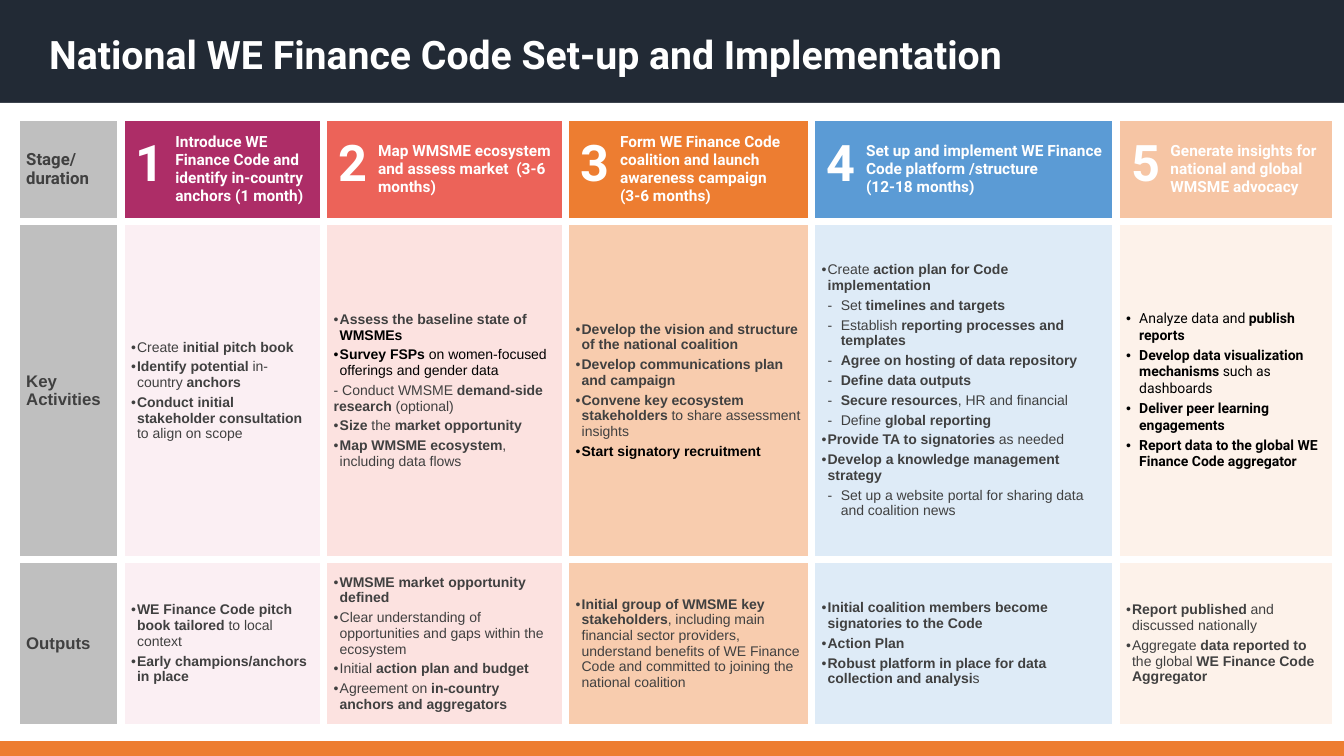
"""Build the slide on setting up and implementing the National WE Finance Code."""
from lxml import etree
from pptx import Presentation
from pptx.dml.color import RGBColor
from pptx.enum.shapes import MSO_SHAPE
from pptx.enum.text import MSO_ANCHOR
from pptx.oxml.ns import qn
from pptx.util import Inches, Pt

RECTANGLE = MSO_SHAPE.RECTANGLE
TOP, MIDDLE = MSO_ANCHOR.TOP, MSO_ANCHOR.MIDDLE

COLORS = {"white": "FFFFFF", "black": "000000", "navy": "222A35", "orange": "ED7D31",
          "text": "404040", "label": "BFBFBF"}
TITLE = "National WE Finance Code Set-up and Implementation "
ROW_LABELS = [("Stage/ duration", "Roboto"), ("Key Activities", "Arial"), ("Outputs", "Arial")]

# *bold*, #black#; the first item of each pair is the bullet style
STAGES = [
    {"width": 2.01, "strong": "AD2D67", "pale": "FBEFF3",
     "name": "Introduce WE Finance Code and identify in-country anchors (1 month)",
     "activities": [
         ("dot", "Create *initial pitch book*"),
         ("dot", "*Identify potential* in-country *anchors*"),
         ("dot", "*Conduct initial stakeholder consultation *to align on scope ")],
     "outputs": [
         ("dot", "*WE Finance Code pitch book tailored *to local context"),
         ("dot", "*Early champions/anchors in place*")]},
    {"width": 2.4, "strong": "EC6359", "pale": "FCE2E0",
     "name": "Map WMSME ecosystem and assess market  (3-6 months)",
     "activities": [
         ("dot", "*Assess the baseline state of *#*WMSMEs *#"),
         ("dot", "#*Survey FSPs* on women-focused offerings and gender data#"),
         ("plain", "- Conduct WMSME *demand-side research *(optional)"),
         ("dot", "*Size* the *market opportunity*"),
         ("dot", "*Map WMSME ecosystem*, including data flows")],
     "outputs": [
         ("dot", "*WMSME market opportunity defined*"),
         ("dot", "Clear understanding of opportunities and gaps within the ecosystem"),
         ("dot", "Initial *action plan and budget*"),
         ("dot", "Agreement on *in-country anchors and aggregators*")]},
    {"width": 2.44, "strong": "ED7D31", "pale": "F8CCAE",
     "name": "Form WE Finance Code coalition and launch awareness campaign\n(3-6 months)",
     "activities": [
         ("dot", "*Develop the vision and structure of the national coalition*"),
         ("dot", "*Develop communications plan and campaign*"),
         ("dot", "*Convene key ecosystem stakeholders *to share assessment insights "),
         ("dot", "#*Start signatory recruitment *#")],
     "outputs": [
         ("dot", "*Initial group of WMSME key stakeholders*, including main financial sector "
                 "providers, understand benefits of WE Finance Code and committed to joining "
                 "the national coalition")]},
    {"width": 3.02, "strong": "5B9BD5", "pale": "DEEBF7",
     "name": "Set up and implement WE Finance Code platform /structure \n(12-18 months)",
     "activities": [
         ("dot", "Create *action plan for Code implementation*"),
         ("dash", "Set *timelines and targets*"),
         ("dash", "Establish* reporting processes and templates*"),
         ("dash", "*Agree on hosting of data repository*"),
         ("dash", "*Define data outputs*"),
         ("dash", "*Secure resources*, HR and financial"),
         ("dash", "Define *global reporting*"),
         ("dot", "*Provide TA to signatories *as needed"),
         ("dot", "*Develop a knowledge management strategy*"),
         ("dash", "Set up a website portal for sharing data and coalition news")],
     "outputs": [
         ("dot", "*Initial coalition members become signatories to the Code*"),
         ("dot", "*Action Plan*"),
         ("dot", "*Robust platform in place for data collection and analysi*s")]},
    {"width": 2.18, "strong": "F6C5A4", "pale": "FDF2EA",
     "name": "Generate insights for national and global WMSME advocacy ",
     "activities": [
         ("wide", "#Analyze data and *publish reports *#"),
         ("wide", "#*Develop data visualization mechanisms *such as dashboards #"),
         ("wide", "#*Deliver peer learning engagements *#"),
         ("wide", "#*Report data to the global WE Finance Code aggregator *#")],
     "outputs": [
         ("dot", "*Report published *and discussed nationally"),
         ("dot", "Aggregate *data reported to *the global *WE Finance Code Aggregator*")]},
]
BULLETS = {"dot": ("•", 0.06, -0.06, "Arial"), "dash": ("-", 0.19, -0.13, "Arial"),
           "wide": ("•", 0.13, -0.13, "Roboto"), "plain": (None, 0, 0, "Arial")}

WIDTH, HEIGHT = 13.33, 7.5
TABLE_LEFT, TABLE_TOP = 0.16, 1.16
LABEL_WIDTH = 1.04
ROW_HEIGHTS = [1.04, 3.35, 1.67]
BANDS = [(7.27, 0.23, "orange"), (0, 1.14, "navy"), (1.02, 0.14, "white"), (6.67, 0.68, "white")]


def rgb(name):
    return RGBColor.from_string(COLORS.get(name, name))


def add_run(paragraph, text, size, font, color, bold=True):
    for index, line in enumerate(text.split("\n")):
        if index:
            paragraph.add_line_break()
        run = paragraph.add_run()
        run.text = line
        run.font.size, run.font.name, run.font.bold = Pt(size), font, bold
        run.font.color.rgb = rgb(color)


def indent(paragraph, left, hanging=0, bullet=None):
    properties = paragraph._p.get_or_add_pPr()
    properties.set("marL", str(Inches(left)))
    properties.set("indent", str(Inches(hanging)))
    if bullet:
        etree.SubElement(properties, qn("a:buFont")).set("typeface", "Arial")
        etree.SubElement(properties, qn("a:buChar")).set("char", bullet)


def style_cell(cell, fill):
    properties = cell._tc.get_or_add_tcPr()
    for side in ("lnL", "lnR", "lnT", "lnB"):
        line = etree.SubElement(properties, qn(f"a:{side}"), w=str(Pt(6)))
        solid = etree.SubElement(line, qn("a:solidFill"))
        etree.SubElement(solid, qn("a:srgbClr"), val=COLORS["white"])
    cell.fill.solid()
    cell.fill.fore_color.rgb = rgb(fill)
    cell.vertical_anchor = MIDDLE


def fill_list(cell, items):
    frame = cell.text_frame
    for index, (style, text) in enumerate(items):
        paragraph = frame.add_paragraph() if index else frame.paragraphs[0]
        bullet, left, hanging, font = BULLETS[style]
        indent(paragraph, left, hanging, bullet)
        paragraph.space_after = Pt(3)
        for color_index, part in enumerate(text.split("#")):
            color = "black" if color_index % 2 else "text"
            for bold_index, words in enumerate(part.split("*")):
                if words:
                    add_run(paragraph, words, 10, font, color, bold_index % 2 == 1)


def add_text(slide, left, top, width, height, text, size):
    frame = slide.shapes.add_textbox(*map(Inches, (left, top, width, height))).text_frame
    frame.word_wrap = True
    frame.vertical_anchor = TOP
    add_run(frame.paragraphs[0], text, size, "Roboto", "white")
    return frame.paragraphs[0]


def add_stage_table(slide):
    widths = [LABEL_WIDTH] + [stage["width"] for stage in STAGES]
    box = (TABLE_LEFT, TABLE_TOP, sum(widths), sum(ROW_HEIGHTS))
    table = slide.shapes.add_table(len(ROW_HEIGHTS), len(widths), *map(Inches, box)).table
    table.first_row = table.horz_banding = False
    for column, width in zip(table.columns, widths):
        column.width = Inches(width)
    for row, height in zip(table.rows, ROW_HEIGHTS):
        row.height = Inches(height)
    for row, (label, font) in enumerate(ROW_LABELS):
        cell = table.cell(row, 0)
        style_cell(cell, "label")
        add_run(cell.text_frame.paragraphs[0], label, 12, font, "text")
    for column, stage in enumerate(STAGES, 1):
        header = table.cell(0, column)
        style_cell(header, stage["strong"])
        paragraph = header.text_frame.paragraphs[0]
        indent(paragraph, 0.44)
        add_run(paragraph, stage["name"], 11, "Roboto", "white")
        for row, part in enumerate(("activities", "outputs"), 1):
            cell = table.cell(row, column)
            style_cell(cell, stage["pale"])
            fill_list(cell, stage[part])
        left = TABLE_LEFT + sum(widths[:column]) + 0.05
        add_text(slide, left, TABLE_TOP + 0.09, 0.57, 0.71, str(column), 36)


def main():
    presentation = Presentation()
    presentation.slide_width, presentation.slide_height = Inches(WIDTH), Inches(HEIGHT)
    slide = presentation.slides.add_slide(presentation.slide_layouts[6])
    for top, height, color in BANDS:
        band = slide.shapes.add_shape(RECTANGLE, 0, Inches(top), Inches(WIDTH), Inches(height))
        band.shadow.inherit = False
        band.fill.solid()
        band.fill.fore_color.rgb = rgb(color)
        band.line.fill.background()
    title = add_text(slide, 0.27, 0.16, 12.97, 1.45, TITLE, 28)
    indent(title, 0.12)
    title.line_spacing = 1.2
    add_stage_table(slide)
    presentation.save("out.pptx")


if __name__ == "__main__":
    main()
